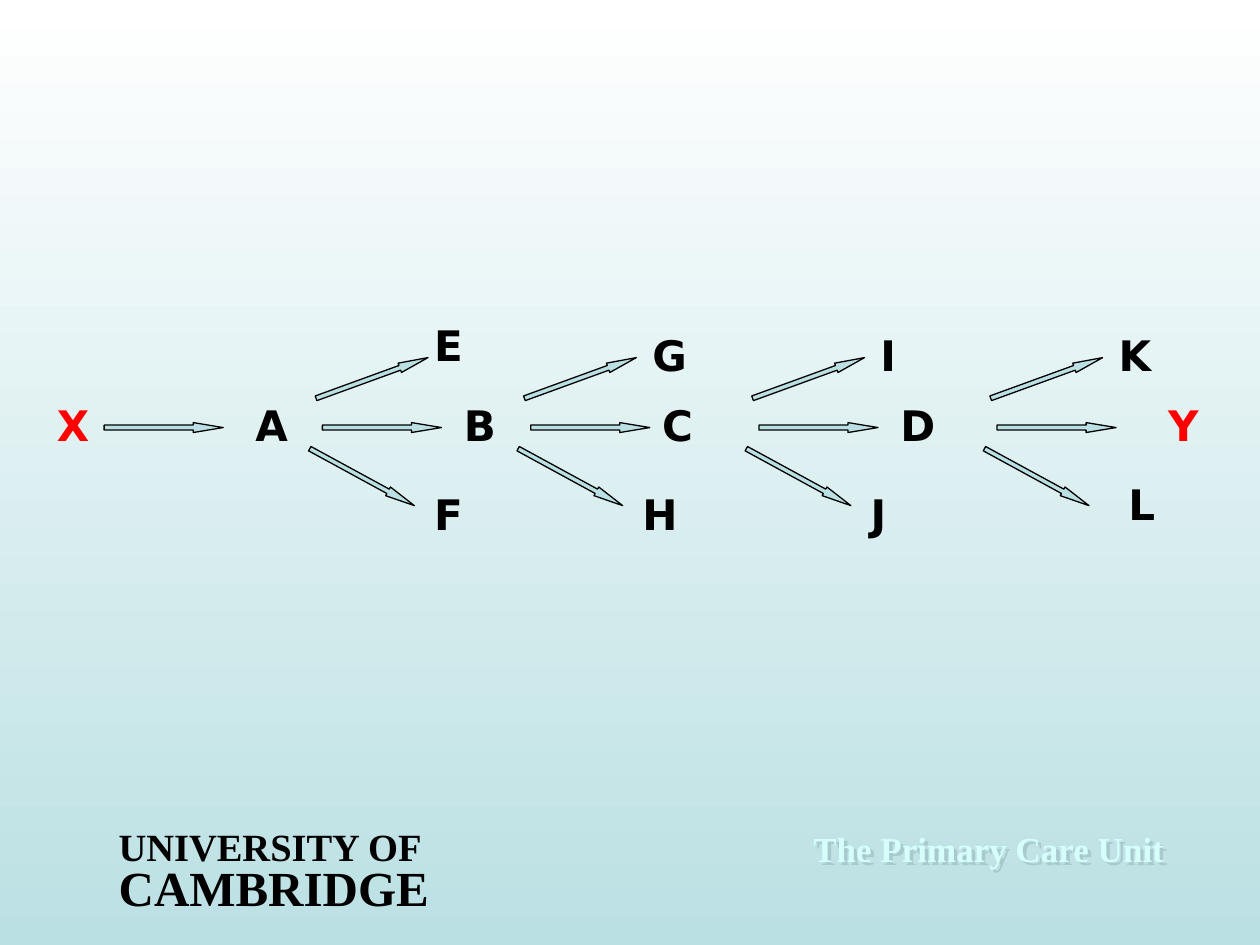
from lxml.etree import SubElement as Sub
from pptx import Presentation
from pptx.dml.color import RGBColor as Rgb
from pptx.enum.shapes import MSO_SHAPE as Kind
from pptx.enum.text import MSO_AUTO_SIZE as Fit, PP_ALIGN as Align
from pptx.oxml.ns import qn
from pptx.util import Inches, Pt

COLORS = {"ink": "000000", "end": "FF0000", "sky": "BBE0E3",
          "white": "FFFFFF", "pale": "D6FFFC", "shade": "A9CACD"}
CELL = Inches(10) / 127  # grid of 127 columns


def grid(*vals):
    return [round(v * CELL) for v in vals]


def tint(name):
    return Rgb.from_string(COLORS[name])


class Board:
    def __init__(self, slide):
        self.slide = slide
        self.sans = {"name": "DejaVu Sans", "bold": True, "size": Pt(24)}
        self.serif = {"name": "Times New Roman", "bold": True}

    def shape(self, kind, *box):
        item = self.slide.shapes.add_shape(kind, *grid(*box))
        item.shadow.inherit = False
        return item

    def fade(self, top, low):
        item = self.shape(Kind.RECTANGLE, 0, 0, 127, 95.25)
        item.line.fill.background()
        item.fill.gradient()
        item.fill.gradient_angle = 270
        for stop, name, pos in zip(item.fill.gradient_stops, (top, low), (0, 1)):
            stop.color.rgb, stop.position = tint(name), pos

    def arrow(self, col, row, turn=0):
        item = self.shape(Kind.RIGHT_ARROW, col, row, 12, 1)
        item.adjustments[0], item.adjustments[1] = 0.5, 3.02
        item.rotation = turn
        item.fill.solid()
        item.fill.fore_color.rgb = tint("sky")
        item.line.color.rgb = tint("ink")
        item.line.width = Pt(0.75)

    def text(self, lines, box, style, color="ink", form=None):
        """Write (words, font changes) lines and return their box."""
        item = self.slide.shapes.add_textbox(*grid(*box))
        frame = item.text_frame
        frame.word_wrap, frame.auto_size = True, Fit.SHAPE_TO_FIT_TEXT
        for num, (words, extra) in enumerate(lines):
            para = frame.add_paragraph() if num else frame.paragraphs[0]
            for key, val in (form or {}).items():
                setattr(para, key, val)
            run = para.add_run()
            run.text = words
            for key, val in {**style, **extra}.items():
                setattr(run.font, key, val)
            run.font.color.rgb = tint(color)
        return item

    def node(self, name, col, row, color="ink"):
        self.text([(name, {})], (col, row, 5, 6.4), self.sans, color,
                  {"alignment": Align.JUSTIFY})

    def shade(self, item):
        """Cast a shadow from the letters of an unfilled box."""
        fx = Sub(item.element.spPr, qn("a:effectLst"))
        cast = Sub(fx, qn("a:outerShdw"), dist="35921", dir="2700000",
                   algn="ctr", rotWithShape="0")
        Sub(cast, qn("a:srgbClr"), val=COLORS["shade"])


def main():
    deck = Presentation()
    deck.slide_width, deck.slide_height = Inches(10), Inches(7.5)
    board = Board(deck.slides.add_slide(deck.slide_layouts[6]))

    # Backdrop and footer
    board.fade("white", "sky")
    board.text([("UNIVERSITY OF", {"size": Pt(22)}),
                ("CAMBRIDGE", {"size": Pt(28)})],
               (10.72, 83.2, 35.8, 9.8), board.serif, form={"line_spacing": 0.8})
    unit = board.text([("The Primary Care Unit", {"size": Pt(20)})],
                      (52.5, 83.25, 66.1, 5.1), board.serif, "pale",
                      {"alignment": Align.RIGHT, "line_spacing": 0.9})
    board.shade(unit)

    # First arrow, then a fan of three from each inner node
    mid = 42.6
    board.arrow(10.5, mid)
    for col in (32.5, 53.5, 76.5, 100.5):
        board.arrow(col, mid)
        board.arrow(col - 1, mid - 5, 340)
        board.arrow(col - 2, mid + 5, 28.6)

    # Main chain
    row = 39.6
    for name, col in zip("ABCD", (24.5, 45.5, 65.5, 89.5)):
        board.node(name, col, row)
    for name, col in zip("XY", (4.5, 116.5)):
        board.node(name, col, row, "end")

    # Side branches: upper and lower
    for name, col, rise in (("E", 42.5, -8), ("G", 64.5, -7), ("I", 87.5, -7),
                            ("K", 111.5, -7), ("F", 42.5, 9), ("H", 63.5, 9),
                            ("J", 86.5, 9), ("L", 112.5, 8)):
        board.node(name, col, row + rise)

    deck.save("out.pptx")


if __name__ == "__main__":
    main()
